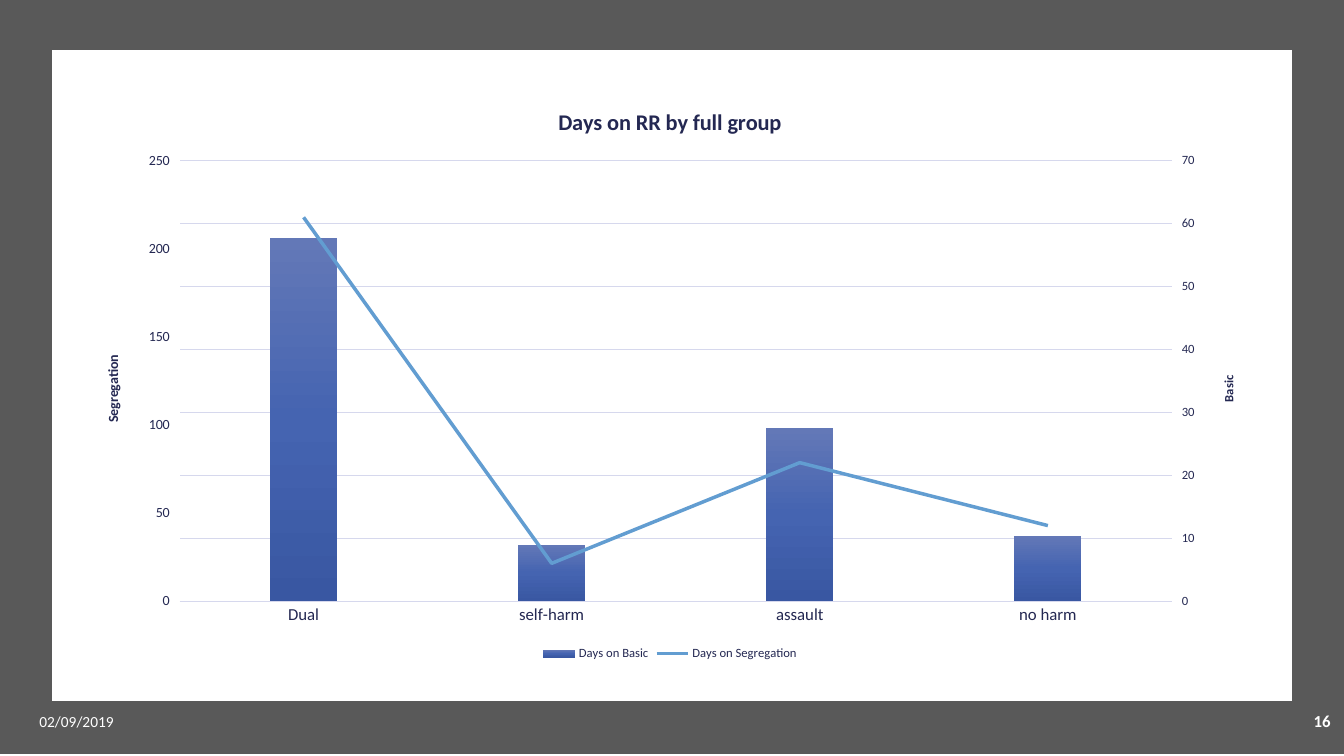
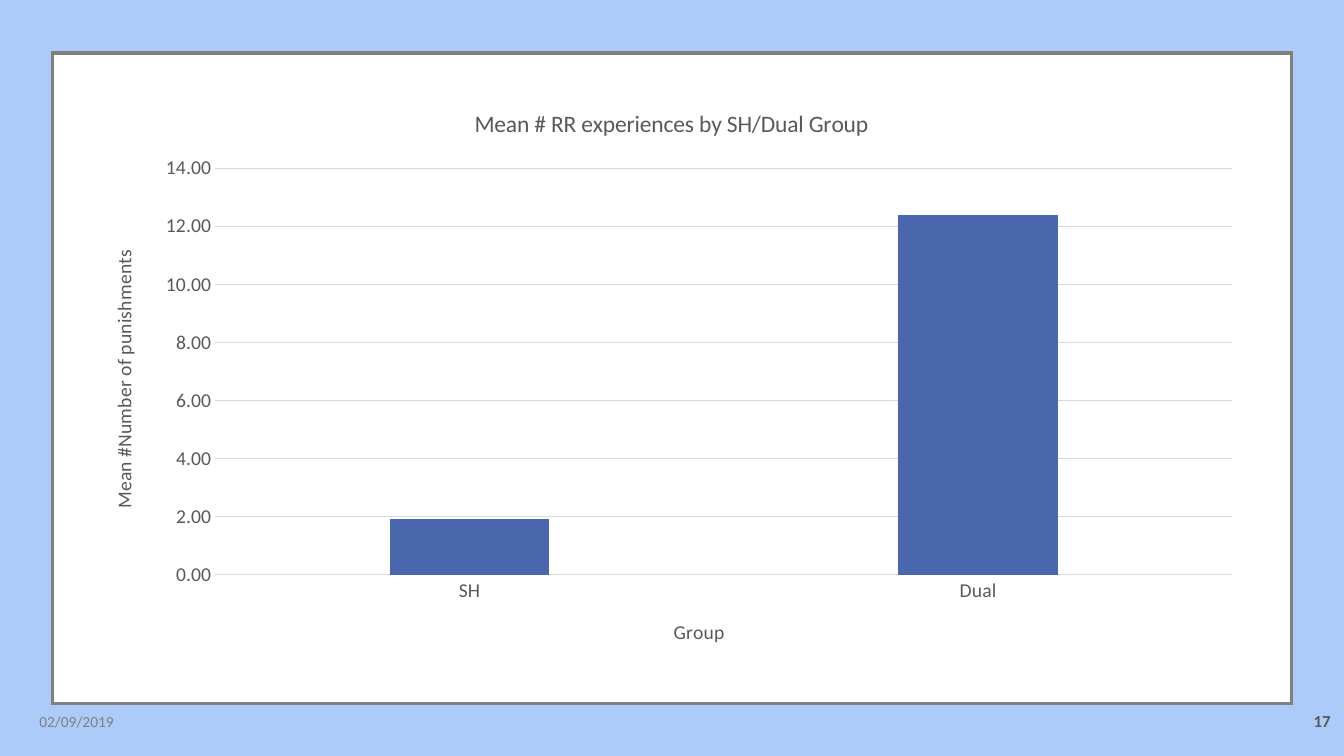
from copy import deepcopy

from pptx import Presentation
from pptx.chart.axis import ValueAxis
from pptx.chart.data import CategoryChartData
from pptx.dml.color import RGBColor
from pptx.enum.chart import XL_AXIS_CROSSES as Crosses
from pptx.enum.chart import XL_CHART_TYPE as ChartType
from pptx.enum.chart import XL_LEGEND_POSITION as LegendPosition
from pptx.enum.chart import XL_MARKER_STYLE as MarkerStyle
from pptx.enum.chart import XL_TICK_LABEL_POSITION as LabelPosition
from pptx.enum.chart import XL_TICK_MARK as TickMark
from pptx.enum.shapes import MSO_SHAPE as Shape
from pptx.enum.text import MSO_ANCHOR as Anchor
from pptx.enum.text import PP_ALIGN as Align
from pptx.oxml import parse_xml
from pptx.oxml.ns import nsdecls, qn
from pptx.util import Pt

FONT = "Calibri"
COLORS = {
    "dark": "595959", "sky": "ACCBF9", "white": "FFFFFF", "gray": "808080",
    "navy": "242852", "lilac": "D6D8ED", "silver": "D9D9D9",
    "blue": "4A66AC", "light_blue": "629DD1",
    "bar_top": "6378B7", "bar_middle": "4564B1", "bar_bottom": "3957A2",
}


class Deck:
    """Shared style and the slide being built."""

    def __init__(self):
        self.prs = Presentation()
        self.prs.slide_width, self.prs.slide_height = Pt(960), Pt(540)

    def color(self, name):
        return RGBColor.from_string(COLORS[name])

    def style(self, font, size, color, bold=False):
        font.name, font.size, font.bold = FONT, Pt(size), bold
        font.color.rgb = self.color(color)

    def rect(self, left, top, width, height, fill, line=None, weight=0):
        box = self.slide.shapes.add_shape(
            Shape.RECTANGLE, Pt(left), Pt(top), Pt(width), Pt(height))
        box.shadow.inherit = False
        box.fill.solid()
        box.fill.fore_color.rgb = self.color(fill)
        if line:
            box.line.color.rgb = self.color(line)
            box.line.width = Pt(weight)
            box._element.spPr.find(qn("a:ln")).append(
                parse_xml(f'<a:miter {nsdecls("a")} lim="800000"/>'))
        else:
            box.line.fill.background()

    def footer(self, left, width, text, size, color, align, bold=False):
        box = self.slide.shapes.add_textbox(Pt(left), Pt(500.5), Pt(width), Pt(29))
        frame = box.text_frame
        frame.word_wrap = True
        frame.vertical_anchor = Anchor.MIDDLE
        paragraph = frame.paragraphs[0]
        paragraph.text = text
        paragraph.alignment = align
        paragraph.space_after = Pt(6)
        self.style(paragraph.font, size, color, bold)

    def new_slide(self, number, backdrop, backdrop_top, panel_top, border,
                  weight, date_color, number_color):
        self.slide = self.prs.slides.add_slide(self.prs.slide_layouts[6])
        self.rect(0, backdrop_top, 960, 540, backdrop)
        self.rect(37.5, panel_top, 885, 464.5, "white", border, weight)
        self.footer(21, 216, "02/09/2019", 11, date_color, Align.LEFT)
        self.footer(837.5, 120, number, 12, number_color, Align.RIGHT, True)

    def title(self, owner, text, size, color, bold):
        frame = (owner.chart_title if hasattr(owner, "chart_title")
                 else owner.axis_title).text_frame
        frame.text = text
        self.style(frame.paragraphs[0].font, size, color, bold)

    def columns(self, box, categories, series, title, size, color, bold, gap, inner):
        data = CategoryChartData()
        data.categories = categories
        for name, values in series:
            data.add_series(name, values)
        chart = self.slide.shapes.add_chart(
            ChartType.COLUMN_CLUSTERED, *map(Pt, box), data).chart
        self.style(chart.font, 10, color)
        self.title(chart, title, size, color, bold)
        chart.has_legend = False
        plot = chart.plots[0]
        plot.gap_width, plot.overlap, plot.vary_by_categories = gap, -27, False
        area = chart._chartSpace.chart.plotArea
        for layout in area.findall(qn("c:layout")):
            area.remove(layout)
        sides = "".join(f'<c:{side} val="{value}"/>' for side, value in zip("xywh", inner))
        area.insert(0, parse_xml(
            f'<c:layout {nsdecls("c")}><c:manualLayout><c:layoutTarget val="inner"/>'
            f'<c:xMode val="edge"/><c:yMode val="edge"/>{sides}'
            '</c:manualLayout></c:layout>'))
        return chart

    def axis(self, axis, size, color, line=None):
        axis.major_tick_mark = axis.minor_tick_mark = TickMark.NONE
        self.style(axis.tick_labels.font, size, color)
        if line:
            axis.format.line.color.rgb = self.color(line)
            axis.format.line.width = Pt(0.75)
        else:
            axis.format.line.fill.background()

    def scale(self, axis, top, step, size, color, number_format, grid=None):
        self.axis(axis, size, color)
        axis.minimum_scale, axis.maximum_scale, axis.major_unit = 0, top, step
        axis.tick_labels.number_format = number_format
        axis.tick_labels.number_format_is_linked = False
        axis.has_major_gridlines = bool(grid)
        if grid:
            axis.major_gridlines.format.line.color.rgb = self.color(grid)
            axis.major_gridlines.format.line.width = Pt(0.75)

    def gradient(self, series, stops):
        marks = "".join(
            f'<a:gs pos="{place * 1000}"><a:srgbClr val="{COLORS[name]}"/></a:gs>'
            for place, name in stops)
        series._element.get_or_add_spPr().append(parse_xml(
            f'<a:gradFill {nsdecls("a")} rotWithShape="1"><a:gsLst>{marks}</a:gsLst>'
            '<a:lin ang="5400000" scaled="0"/></a:gradFill>'))

    def split_line(self, chart):
        area = chart._chartSpace.chart.plotArea
        bars = area.find(qn("c:barChart"))
        line = parse_xml(
            f'<c:lineChart {nsdecls("c")}><c:grouping val="standard"/>'
            '<c:varyColors val="0"/><c:marker val="1"/></c:lineChart>')
        moved = bars.findall(qn("c:ser"))[1]
        for flag in moved.findall(qn("c:invertIfNegative")):
            moved.remove(flag)
        line.insert(2, moved)
        bars.addnext(line)
        line_axes = [area.find(qn("c:catAx")), area.find(qn("c:valAx"))]
        bar_axes = [deepcopy(axis) for axis in line_axes]
        own_ids, cross_ids = ("50010", "50020"), ("50020", "50010")
        for link, axis, own, cross in zip(
                bars.findall(qn("c:axId")), bar_axes, own_ids, cross_ids):
            line.append(deepcopy(link))
            link.set("val", own)
            axis.find(qn("c:axId")).set("val", own)
            axis.find(qn("c:crossAx")).set("val", cross)
        line_axes[1].addnext(bar_axes[0])
        bar_axes[0].addnext(bar_axes[1])
        bar_axes[0].find(qn("c:delete")).set("val", "1")
        line_axes[1].find(qn("c:axPos")).set("val", "r")
        chart.category_axis.crosses = Crosses.MAXIMUM
        return ValueAxis(bar_axes[1]), ValueAxis(line_axes[1])


def days_slide(deck):
    deck.new_slide("16", "dark", -1.5, 36, "white", 0.85, "white", "white")
    chart = deck.columns(
        (61.5, 61, 834, 414), ("Dual", "self-harm", "assault", "no harm"),
        (("Days on Basic", (206, 32, 98, 37)), ("Days on Segregation", (61, 6, 22, 12))),
        "Days on RR by full group", 16, "navy", True, 269, (0.08, 0.13, 0.85, 0.76))
    basic_axis, segregation_axis = deck.split_line(chart)
    deck.axis(chart.category_axis, 12, "navy", "lilac")
    deck.scale(basic_axis, 250, 50, 10, "navy", "General")
    deck.scale(segregation_axis, 70, 10, 9, "navy", "General", "lilac")
    basic_axis.tick_label_position = LabelPosition.LOW
    segregation_axis.tick_label_position = LabelPosition.HIGH
    deck.title(basic_axis, "Basic", 9, "navy", True)
    deck.title(segregation_axis, "Segregation", 10, "navy", True)
    basic, segregation = (plot.series[0] for plot in chart.plots)
    deck.gradient(basic, ((0, "bar_top"), (50, "bar_middle"), (100, "bar_bottom")))
    segregation.smooth = False
    segregation.marker.style = MarkerStyle.NONE
    segregation.format.line.color.rgb = deck.color("light_blue")
    segregation.format.line.width = Pt(2.5)
    chart.has_legend = True
    chart.legend.position = LegendPosition.BOTTOM
    chart.legend.include_in_layout = False
    deck.style(chart.legend.font, 9, "navy")


def mean_slide(deck):
    deck.new_slide("17", "sky", 0, 38, "gray", 2.5, "gray", "dark")
    chart = deck.columns(
        (62, 62, 835, 415), ("SH", "Dual"), (("Series 1", (1.9, 12.4)),),
        "Mean # RR experiences by SH/Dual Group", 16.8, "dark", False, 219,
        (0.11, 0.14, 0.87, 0.7))
    deck.axis(chart.category_axis, 14, "dark", "silver")
    deck.scale(chart.value_axis, 14, 2, 14, "dark", "#,##0.00", "silver")
    deck.title(chart.category_axis, "Group", 14, "dark", False)
    deck.title(chart.value_axis, "Mean #Number of punishments", 14, "dark", False)
    fill = chart.plots[0].series[0].format.fill
    fill.solid()
    fill.fore_color.rgb = deck.color("blue")


def main():
    deck = Deck()
    days_slide(deck)
    mean_slide(deck)
    deck.prs.save("out.pptx")


if __name__ == "__main__":
    main()
